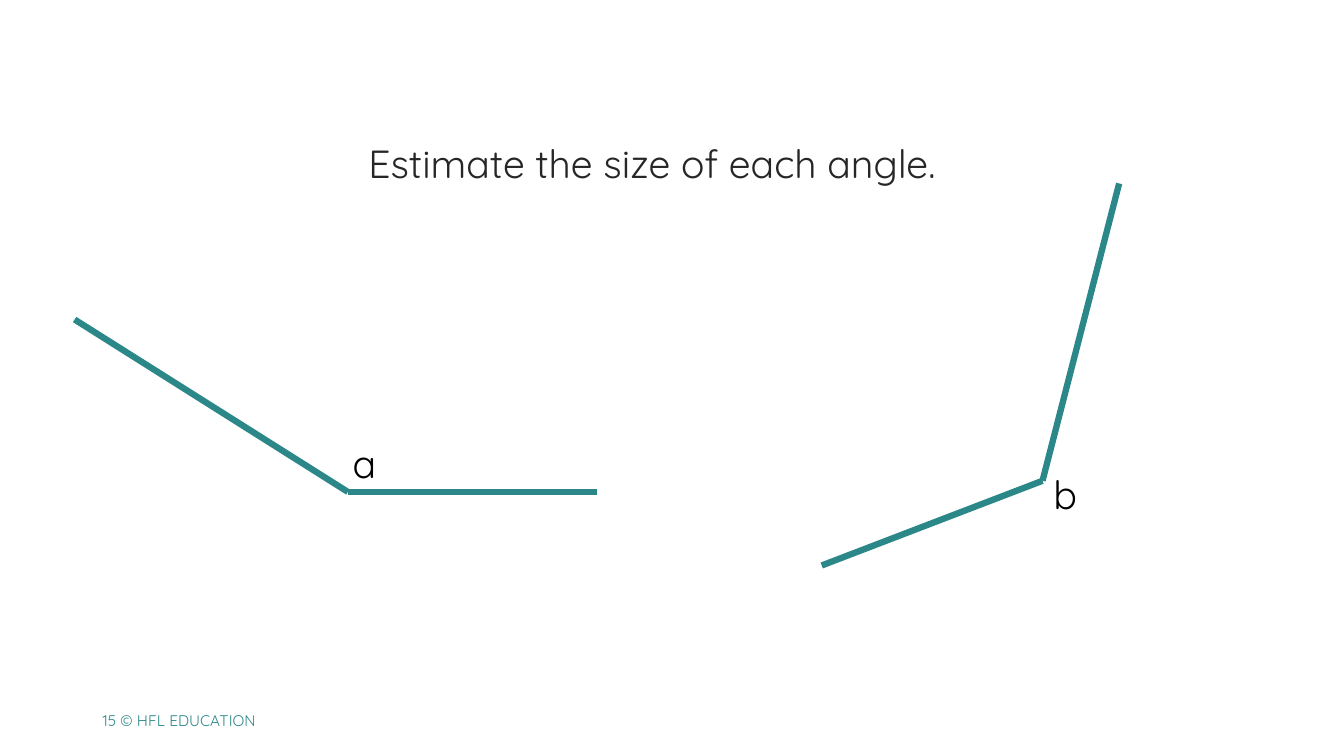
from dataclasses import dataclass

from lxml import etree
from pptx import Presentation
from pptx.dml.color import RGBColor
from pptx.enum.shapes import MSO_CONNECTOR
from pptx.enum.text import MSO_ANCHOR, PP_ALIGN
from pptx.oxml.ns import qn
from pptx.util import Inches, Pt

STRAIGHT = MSO_CONNECTOR.STRAIGHT
TOP, MIDDLE = MSO_ANCHOR.TOP, MSO_ANCHOR.MIDDLE
LEFT, CENTER = PP_ALIGN.LEFT, PP_ALIGN.CENTER
TITLE_ONLY = 5


@dataclass(frozen=True)
class Theme:
    font: str = "Quicksand"
    arm: RGBColor = RGBColor(0x2C, 0x88, 0x88)
    footer: RGBColor = RGBColor(0x2F, 0x89, 0x89)
    heading: RGBColor = RGBColor(0x26, 0x26, 0x26)
    label: RGBColor = RGBColor(0, 0, 0)
    text_size: Pt = Pt(28)
    footer_size: Pt = Pt(11)
    arm_width: Pt = Pt(4.5)


THEME = Theme()


def write_text(shape, text, size, color, anchor=TOP, alignment=LEFT):
    frame = shape.text_frame
    frame.word_wrap = True
    frame.vertical_anchor = anchor
    paragraph = frame.paragraphs[0]
    paragraph.alignment = alignment
    run = paragraph.add_run()
    run.text = text
    run.font.name = THEME.font
    run.font.size = size
    run.font.color.rgb = color


def add_text(slide, box, text, size, color, anchor=TOP):
    shape = slide.shapes.add_textbox(*map(Inches, box))
    write_text(shape, text, size, color, anchor)


def add_heading(slide, box, text):
    title = slide.shapes.title
    title.left, title.top, title.width, title.height = map(Inches, box)
    write_text(title, text, THEME.text_size, THEME.heading, TOP, CENTER)


def add_angle(slide, box, vertex, ends, label, label_offset):
    """Draw two arms from the vertex to the ends, given as offsets in the box."""
    left, top = box

    def place(offset):
        return left + offset[0], top + offset[1]

    group = slide.shapes.add_group_shape()
    for end in ends:
        points = (*place(vertex), *place(end))
        arm = group.shapes.add_connector(STRAIGHT, *map(Inches, points))
        arm.line.color.rgb = THEME.arm
        arm.line.width = THEME.arm_width
        etree.SubElement(arm._element.spPr, qn("a:effectLst"))
    add_text(slide, (*place(label_offset), 1.08, 0.57), label,
             THEME.text_size, THEME.label)


def build_angle_slide(presentation):
    slide = presentation.slides.add_slide(presentation.slide_layouts[TITLE_ONLY])
    add_heading(slide, (0.73, 1.33, 11.47, 0.6), "Estimate the size of each angle.")
    add_angle(slide, (0.74, 3.17), (2.71, 1.71), [(0, 0), (5.18, 1.71)],
              "a", (2.66, 1.14))
    add_angle(slide, (8.15, 1.82), (2.19, 2.95), [(2.95, 0), (0, 3.79)],
              "b", (2.2, 2.8))
    add_text(slide, (0.92, 6.95, 2.75, 0.4), "15 © HFL EDUCATION",
             THEME.footer_size, THEME.footer, MIDDLE)


def main():
    presentation = Presentation()
    presentation.slide_width = Inches(13.33)
    presentation.slide_height = Inches(7.5)
    build_angle_slide(presentation)
    presentation.save("out.pptx")


if __name__ == "__main__":
    main()
